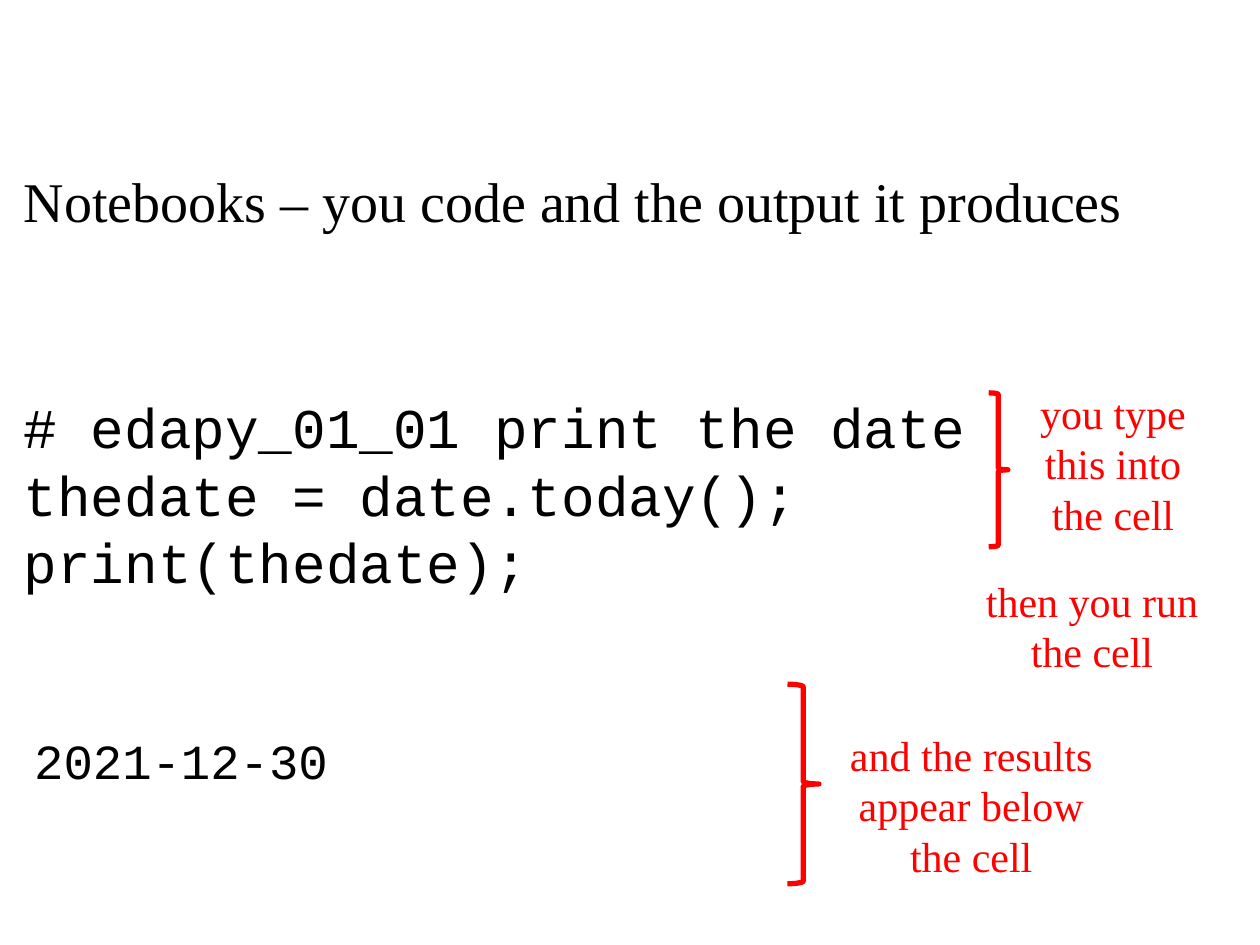
from dataclasses import dataclass

from pptx import Presentation
from pptx import util as u
from pptx.dml.color import RGBColor
from pptx.enum import shapes, text


@dataclass(frozen=True)
class Theme:
    ink: RGBColor = RGBColor(0, 0, 0)
    accent: RGBColor = RGBColor(255, 0, 0)
    paper: RGBColor = RGBColor(255, 255, 255)
    serif: str = "Times New Roman"
    mono: str = "Courier New"
    body: int = 32
    output: int = 28
    note: int = 24
    brace_line: int = 3


THEME = Theme()


def format_paragraph(paragraph, content, *, font, size, color=THEME.ink,
                     align=text.PP_ALIGN.LEFT, space_before=0):
    """Fill one paragraph with a single formatted run."""
    paragraph.alignment = align
    paragraph.space_before = u.Pt(space_before)
    run = paragraph.add_run()
    run.text = content
    run.font.name = font
    run.font.size = u.Pt(size)
    run.font.color.rgb = color


def add_text(slide, box, lines, *, anchor=text.MSO_ANCHOR.MIDDLE, wrap=True):
    """Add a text box; each line is a pair of content and format."""
    shape = slide.shapes.add_textbox(*map(u.Pt, box))
    frame = shape.text_frame
    frame.word_wrap = wrap
    frame.vertical_anchor = anchor
    for index, (content, style) in enumerate(lines):
        paragraph = frame.add_paragraph() if index else frame.paragraphs[0]
        format_paragraph(paragraph, content, **style)
    return shape


def add_note(slide, box, *lines):
    style = dict(font=THEME.serif, size=THEME.note, color=THEME.accent,
                 align=text.PP_ALIGN.CENTER)
    add_text(slide, box, [(line, style) for line in lines])


def add_brace(slide, box):
    shape = slide.shapes.add_shape(
        shapes.MSO_SHAPE.RIGHT_BRACE, *map(u.Pt, box))
    shape.shadow.inherit = False
    shape.fill.background()
    shape.line.color.rgb = THEME.accent
    shape.line.width = u.Pt(THEME.brace_line)


def main():
    presentation = Presentation()
    presentation.slide_width = u.Pt(720)
    presentation.slide_height = u.Pt(540)
    slide = presentation.slides.add_slide(presentation.slide_layouts[6])
    slide.background.fill.solid()
    slide.background.fill.fore_color.rgb = THEME.paper

    # Heading and the code below it
    heading = dict(font=THEME.serif, size=THEME.body)
    code = dict(font=THEME.mono, size=THEME.body)
    add_text(slide, (6.5, 91.5, 702, 256.5), [
        ("Notebooks – you code and the output it produces", heading),
        ("# edapy_01_01 print the date", code | {"space_before": 91}),
        ("thedate = date.today();", code),
        ("print(thedate);", code),
    ], anchor=text.MSO_ANCHOR.TOP)

    # Typing the code
    add_brace(slide, (565, 224.5, 11, 88))
    add_note(slide, (555, 212, 162, 105), "you type", "this into", "the cell")

    # Reading the results
    add_note(slide, (474, 411, 162, 98),
             "and the results", "appear below", "the cell")
    add_brace(slide, (450, 391, 18, 114))

    # Running the cell
    add_note(slide, (543, 305, 162, 105), "then you run the cell")

    # Printed output
    output = dict(font=THEME.mono, size=THEME.output)
    shape = add_text(slide, (12.5, 414, 185, 41),
                     [("2021-12-30", output)], wrap=False)
    shape.text_frame.auto_size = text.MSO_AUTO_SIZE.SHAPE_TO_FIT_TEXT

    presentation.save("out.pptx")


if __name__ == "__main__":
    main()
